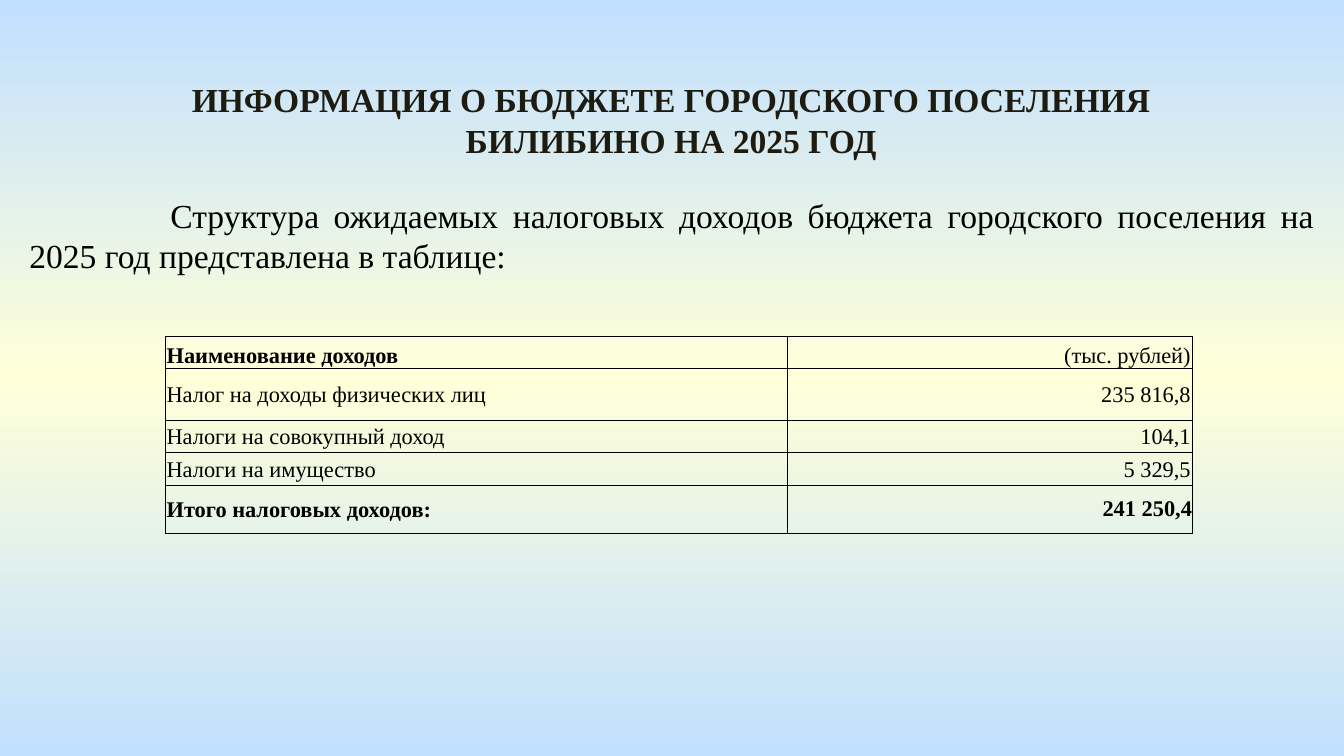
from copy import deepcopy

from lxml import etree
from pptx import Presentation
from pptx.dml.color import RGBColor
from pptx.enum import text as t
from pptx.oxml.ns import qn
from pptx.util import Inches, Pt

BLACK = RGBColor(0, 0, 0)
DARK = RGBColor(0x1E, 0x1C, 0x11)
BLUE = RGBColor(0xC1, 0xE0, 0xFF)
CREAM = RGBColor(0xFF, 0xFF, 0xD9)
MID, RIGHT, JUST = t.PP_ALIGN.CENTER, t.PP_ALIGN.RIGHT, t.PP_ALIGN.JUSTIFY


def write(frame, words, align, size, color=BLACK, bold=False):
    para = frame.paragraphs[0]
    para.alignment = align
    run = para.add_run()
    run.text = words
    look = {"name": "Times New Roman", "size": Pt(size), "bold": bold}
    for key, value in look.items():
        setattr(run.font, key, value)
    run.font.color.rgb = color
    return para


def border(cell):
    """Draw a thin black line on all four sides, ahead of the cell's fill."""
    props = cell._tc.get_or_add_tcPr()
    for place, side in enumerate(("lnL", "lnR", "lnT", "lnB")):
        line = etree.Element(qn(f"a:{side}"), w=str(Pt(0.5)))
        fill = etree.SubElement(line, qn("a:solidFill"))
        etree.SubElement(fill, qn("a:srgbClr"), val=str(BLACK))
        props.insert(place, line)


prs = Presentation()
prs.slide_width = Inches(10)
prs.slide_height = Inches(10) * 9 // 16
slide = prs.slides.add_slide(prs.slide_layouts[6])

# Background: blue at both ends, cream in the middle
back = slide.background.fill
back.gradient()
back.gradient_angle = 90
stops = slide.element.find(".//" + qn("a:gsLst"))
stops.insert(1, deepcopy(stops[0]))
for stop, color, place in zip(back.gradient_stops, (BLUE, CREAM, BLUE), (0, 0.5, 1)):
    stop.color.rgb = color
    stop.position = place

# Title and lead
title = slide.shapes.add_textbox(Inches(1.13), Inches(0.54), Inches(7.73), Inches(0.71))
lead = slide.shapes.add_textbox(Inches(0.12), Inches(1.4), Inches(9.76), Inches(0.71))
for box in (title, lead):
    box.text_frame.word_wrap = True
    box.text_frame.auto_size = t.MSO_AUTO_SIZE.SHAPE_TO_FIT_TEXT
write(title.text_frame, "ИНФОРМАЦИЯ О БЮДЖЕТЕ ГОРОДСКОГО ПОСЕЛЕНИЯ БИЛИБИНО НА 2025 ГОД",
      MID, 18, DARK, True)
para = write(lead.text_frame, "Структура ожидаемых налоговых доходов бюджета городского "
             "поселения на 2025 год представлена в таблице:", JUST, 18)
para._p.get_or_add_pPr().set("indent", str(Inches(1.05)))

# Tax income table
rows = [
    ("Наименование доходов", "(тыс. рублей)", 0.24),
    ("Налог на доходы физических лиц", "235 816,8", 0.39),
    ("Налоги на совокупный доход", "104,1", 0.24),
    ("Налоги на имущество", "5 329,5", 0.24),
    ("Итого налоговых доходов:", "241 250,4", 0.36),
]
last = len(rows) - 1
table = slide.shapes.add_table(
    len(rows), 2, Inches(1.23), Inches(2.5), Inches(7.64), Inches(1.46)).table
table.first_row = table.horz_banding = False
for col, width in zip(table.columns, (4.63, 3.01)):
    col.width = Inches(width)
for r, (name, total, height) in enumerate(rows):
    table.rows[r].height = Inches(height)
    for c, (words, align) in enumerate(((name, JUST), (total, RIGHT))):
        cell = table.cell(r, c)
        pad = Inches(0 if (r, c) == (last, 1) else 0.01)
        form = {
            "margin_left": pad, "margin_right": pad, "margin_top": pad, "margin_bottom": 0,
            "vertical_anchor": t.MSO_ANCHOR.MIDDLE if r else t.MSO_ANCHOR.BOTTOM,
        }
        for key, value in form.items():
            setattr(cell, key, value)
        cell.fill.background()
        border(cell)
        write(cell.text_frame, words, align, 12, bold=r == last or (r, c) == (0, 0))

prs.save("out.pptx")
